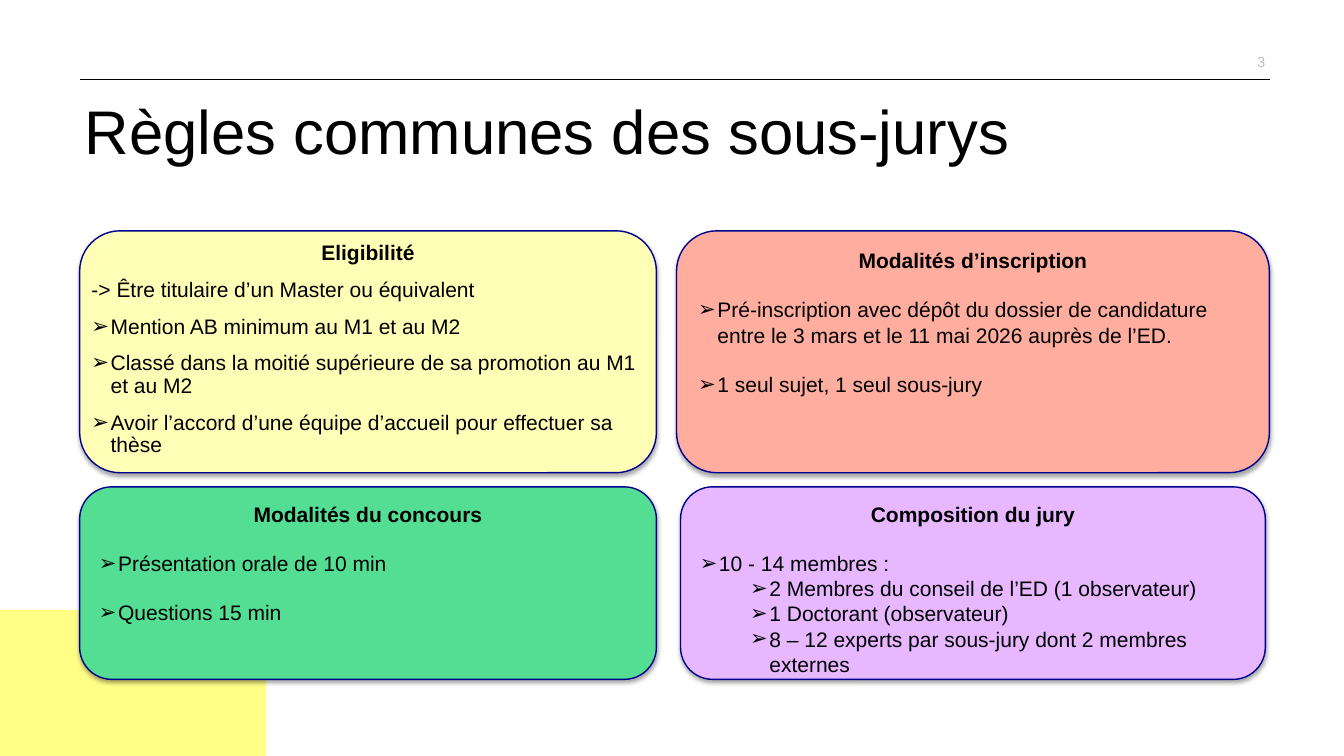
from dataclasses import dataclass

from lxml import etree
from pptx import Presentation
from pptx.dml.color import RGBColor
from pptx.enum.shapes import MSO_CONNECTOR, MSO_SHAPE
from pptx.enum.text import MSO_ANCHOR, PP_ALIGN
from pptx.oxml.ns import qn
from pptx.util import Emu, Pt

EMU_PER_PX = 9144  # 100 px to the inch


def px(length):
    return Emu(length * EMU_PER_PX)


@dataclass(frozen=True)
class Theme:
    font: str = "Arial"
    ink: str = "000000"
    muted: str = "BFBFBF"
    border: str = "00008E"
    accent: str = "FFFE85"
    yellow: str = "FFFEB6"
    salmon: str = "FFAD9E"
    green: str = "53DE94"
    violet: str = "E7B7FF"
    title_size: float = 44
    body_size: float = 15
    number_size: float = 10.5
    line_gap: float = 17.25  # one line of body text, in points


class SlideBuilder:
    def __init__(self, slide, theme):
        self.shapes = slide.shapes
        self.theme = theme

    def style(self, paragraph, size, color=None, bold=False):
        font = paragraph.font
        font.name, font.size, font.bold = self.theme.font, Pt(size), bold
        font.color.rgb = RGBColor.from_string(color or self.theme.ink)

    def frame(self, shape, insets=(0, 0), anchor=MSO_ANCHOR.TOP):
        frame = shape.text_frame
        frame.word_wrap = True
        frame.vertical_anchor = anchor
        frame.margin_left = frame.margin_right = px(insets[0])
        frame.margin_top = frame.margin_bottom = px(insets[1])
        return frame

    def text(self, box, content, size, color, align=PP_ALIGN.LEFT,
             anchor=MSO_ANCHOR.TOP, spacing=1.0):
        shape = self.shapes.add_textbox(*map(px, box))
        paragraph = self.frame(shape, anchor=anchor).paragraphs[0]
        paragraph.text = content
        paragraph.alignment = align
        paragraph.line_spacing = spacing
        self.style(paragraph, size, color)

    def rule(self, left, right, top):
        line = self.shapes.add_connector(
            MSO_CONNECTOR.STRAIGHT, px(left), px(top), px(right), px(top))
        line.line.color.rgb = RGBColor.from_string(self.theme.ink)
        line.line.width = Pt(0.75)
        etree.SubElement(line._element.spPr, qn("a:effectLst"))

    def block(self, box, fill, kind=MSO_SHAPE.RECTANGLE):
        shape = self.shapes.add_shape(kind, *map(px, box))
        shape.shadow.inherit = False
        shape.fill.solid()
        shape.fill.fore_color.rgb = RGBColor.from_string(fill)
        shape.line.fill.background()
        return shape

    def soft_shadow(self, shape):
        effects = shape._element.spPr.find(qn("a:effectLst"))
        shadow = etree.SubElement(
            effects, qn("a:outerShdw"), blurRad="40000", dist="23000",
            dir="5400000", rotWithShape="0")
        color = etree.SubElement(shadow, qn("a:srgbClr"), val=self.theme.ink)
        etree.SubElement(color, qn("a:alpha"), val="35000")

    def bullet(self, paragraph, level):
        paragraph.level = level
        properties = paragraph._p.get_or_add_pPr()
        properties.set("marL", str(px(19 + 50 * level)))
        properties.set("indent", str(px(-19)))
        etree.SubElement(properties, qn("a:buFont"), typeface=self.theme.font)
        etree.SubElement(properties, qn("a:buChar"), char="➢")

    def card(self, box, fill, heading, items, insets=(10, 5), spacing=1.0):
        """Each item is (text, bullet level or None, points before)."""
        shape = self.block(box, fill, MSO_SHAPE.ROUNDED_RECTANGLE)
        shape.line.color.rgb = RGBColor.from_string(self.theme.border)
        shape.line.width = Pt(1)
        self.soft_shadow(shape)
        frame = self.frame(shape, insets)

        title = frame.paragraphs[0]
        title.text = heading
        title.alignment = PP_ALIGN.CENTER
        title.line_spacing = spacing
        self.style(title, self.theme.body_size, bold=True)

        for content, level, gap in items:
            paragraph = frame.add_paragraph()
            paragraph.text = content
            paragraph.alignment = PP_ALIGN.LEFT
            paragraph.line_spacing = spacing
            paragraph.space_before = Pt(gap)
            if level is not None:
                self.bullet(paragraph, level)
            self.style(paragraph, self.theme.body_size)


def main():
    theme = Theme()
    presentation = Presentation()
    presentation.slide_width, presentation.slide_height = px(1333), px(750)
    slide = presentation.slides.add_slide(presentation.slide_layouts[6])
    builder = SlideBuilder(slide, theme)

    # Page furniture
    builder.text((955, 41, 300, 40), "3", theme.number_size, theme.muted,
                 PP_ALIGN.RIGHT, MSO_ANCHOR.MIDDLE)
    builder.rule(79, 1260, 79)
    builder.block((0, 605, 264, 145), theme.accent)

    # Title
    builder.text((84, 101, 1181, 77), "Règles communes des sous-jurys",
                 theme.title_size, theme.ink, spacing=0.9)

    # Top row of cards
    left, width = 79, 572
    top, top_height = 229, 240
    bottom, bottom_height = 483, 191
    gap = theme.line_gap
    builder.card((left, top, width, top_height), theme.yellow, "Eligibilité", [
        ("-> Être titulaire d’un Master ou équivalent", None, 10),
        ("Mention AB minimum au M1 et au M2", 0, 10),
        ("Classé dans la moitié supérieure de sa promotion au M1 et au M2", 0, 10),
        ("Avoir l’accord d’une équipe d’accueil pour effectuer sa thèse", 0, 10),
    ], insets=(0, 0), spacing=0.9)
    builder.card((671, top, 588, top_height), theme.salmon, "Modalités d’inscription", [
        ("Pré-inscription avec dépôt du dossier de candidature "
         "entre le 3 mars et le 11 mai 2026 auprès de l’ED.", 0, gap),
        ("1 seul sujet, 1 seul sous-jury", 0, gap),
    ])

    # Bottom row of cards
    builder.card((left, bottom, width, bottom_height), theme.green, "Modalités du concours", [
        ("Présentation orale de 10 min", 0, gap),
        ("Questions 15 min", 0, gap),
    ])
    builder.card((675, bottom, 580, bottom_height), theme.violet, "Composition du jury", [
        ("10 - 14 membres :", 0, gap),
        ("2 Membres du conseil de l’ED (1 observateur)", 1, 0),
        ("1 Doctorant (observateur)", 1, 0),
        ("8 – 12 experts par sous-jury dont 2 membres externes", 1, 0),
    ])

    presentation.save("out.pptx")


if __name__ == "__main__":
    main()
